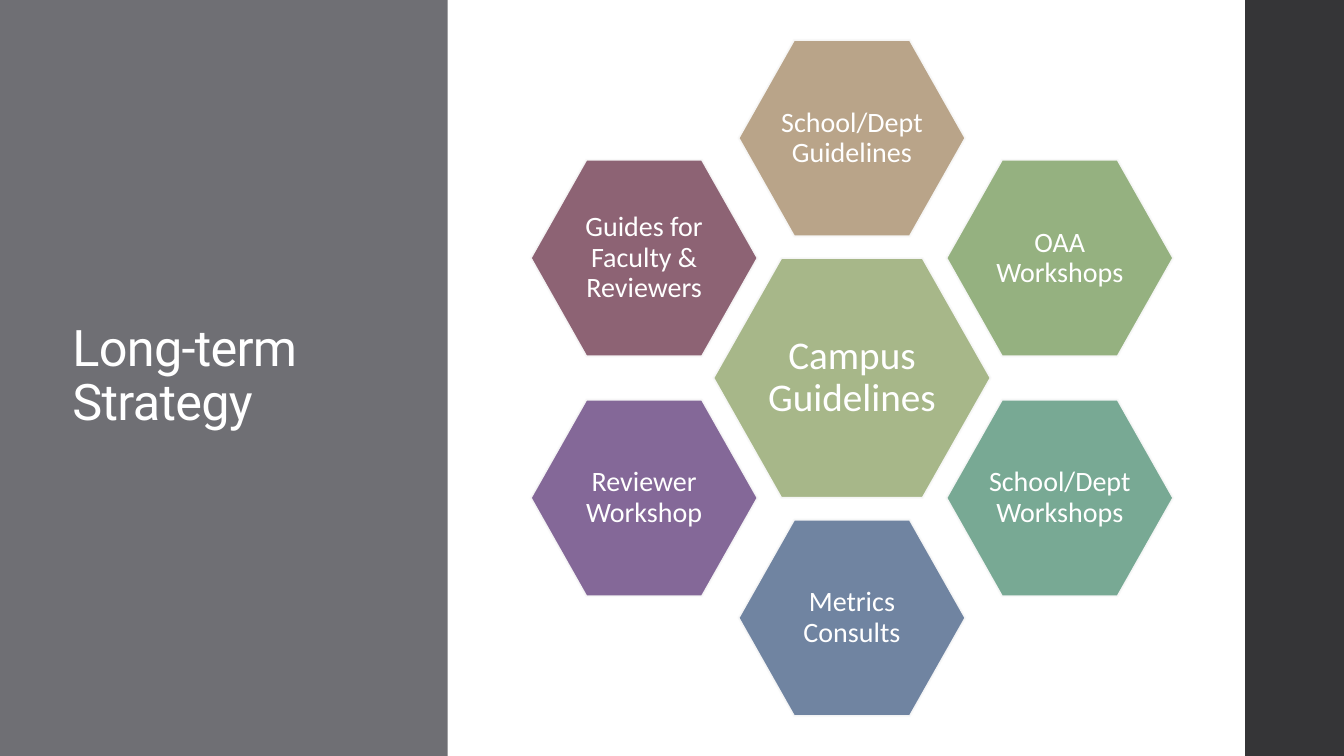
import math

import pptx
import pptx.dml.color
import pptx.enum.shapes
import pptx.enum.text
import pptx.oxml
import pptx.oxml.ns
import pptx.util

Inches = pptx.util.Inches
Pt = pptx.util.Pt
PP_ALIGN = pptx.enum.text.PP_ALIGN

COLORS = {
    "white": "FFFFFF",
    "title_panel": "6F6F74",
    "side_bar": "353537",
    "outline": "F9F9F9",
    "campus": "A7B789",
    "tan": "B9A489",
    "green": "95B180",
    "teal": "78A994",
    "blue": "7084A1",
    "purple": "846898",
    "plum": "8D6374",
}

CENTER_X, CENTER_Y = 8.45, 3.75
RING_RADIUS = 2.38

# Clockwise from the top
RING = [
    ("School/Dept Guidelines", "tan"),
    ("OAA Workshops", "green"),
    ("School/Dept Workshops", "teal"),
    ("Metrics Consults", "blue"),
    ("Reviewer Workshop", "purple"),
    ("Guides for Faculty & Reviewers", "plum"),
]


def rgb(name):
    return pptx.dml.color.RGBColor.from_string(COLORS[name])


def write_text(sp, text, size, font, align, inset_x, inset_y):
    """Put one vertically centred white paragraph in the shape."""
    tf = sp.text_frame
    tf.word_wrap = True
    tf.vertical_anchor = pptx.enum.text.MSO_ANCHOR.MIDDLE
    tf.margin_left = tf.margin_right = Inches(inset_x)
    tf.margin_top = tf.margin_bottom = Inches(inset_y)
    p = tf.paragraphs[0]
    p.text = text
    p.alignment = align
    p.line_spacing = 0.9
    p.font.size = Pt(size)
    p.font.name = font
    p.font.color.rgb = rgb("white")
    return p


def add_panel(s, left, width, color):
    """Add a full-height plain rectangle."""
    sp = s.shapes.add_shape(pptx.enum.shapes.MSO_SHAPE.RECTANGLE,
                            Inches(left), 0, Inches(width), Inches(7.5))
    sp.shadow.inherit = False
    sp.fill.solid()
    sp.fill.fore_color.rgb = rgb(color)
    sp.line.fill.background()


def add_title(s, text):
    sp = s.shapes.add_textbox(Inches(0.62), Inches(0.91), Inches(2.97), Inches(5.67))
    p = write_text(sp, text, 36, "Roboto", PP_ALIGN.LEFT, 0.1, 0.05)
    p.runs[0]._r.get_or_add_rPr().set("spc", "-50")


def set_line_alpha(sp, percent):
    qn = pptx.oxml.ns.qn
    color = sp._element.spPr.find(qn("a:ln")).find(".//" + qn("a:srgbClr"))
    alpha = pptx.oxml.parse_xml(f'<a:alpha {pptx.oxml.ns.nsdecls("a")} val="{percent * 1000}"/>')
    color.append(alpha)


def add_hexagon(group, cx, cy, width, height, text, color, size, insets):
    half_w, half_h = width / 2, height / 2
    flat = half_w * 0.51
    corners = [(-half_w, 0), (-flat, -half_h), (flat, -half_h),
               (half_w, 0), (flat, half_h), (-flat, half_h)]
    points = [(Inches(cx + dx), Inches(cy + dy)) for dx, dy in corners]
    builder = group.shapes.build_freeform(*points[0])
    builder.add_line_segments(points[1:], close=True)
    sp = builder.convert_to_shape()
    sp.shadow.inherit = False
    sp.fill.solid()
    sp.fill.fore_color.rgb = rgb(color)
    sp.line.color.rgb = rgb("outline")
    sp.line.width = Pt(1.35)
    set_line_alpha(sp, 95)
    write_text(sp, text, size, "Calibri", PP_ALIGN.CENTER, *insets)


def add_strategy_ring(s):
    group = s.shapes.add_group_shape()
    add_hexagon(group, CENTER_X, CENTER_Y, 2.75, 2.38,
                "Campus Guidelines", "campus", 28, (0.49, 0.43))
    for i, (text, color) in enumerate(RING):
        angle = math.radians(i * 360 / len(RING))
        cx = CENTER_X + RING_RADIUS * math.sin(angle)
        cy = CENTER_Y - RING_RADIUS * math.cos(angle)
        add_hexagon(group, cx, cy, 2.25, 1.95, text, color, 20, (0.4, 0.35))


def main():
    prs = pptx.Presentation()
    prs.slide_width = Inches(13.33)
    prs.slide_height = Inches(7.5)
    s = prs.slides.add_slide(prs.slide_layouts[6])
    add_panel(s, 0, 4.44, "title_panel")
    add_title(s, "Long-term Strategy")
    add_panel(s, 12.35, 0.98, "side_bar")
    add_strategy_ring(s)
    prs.save("out.pptx")


if __name__ == "__main__":
    main()
